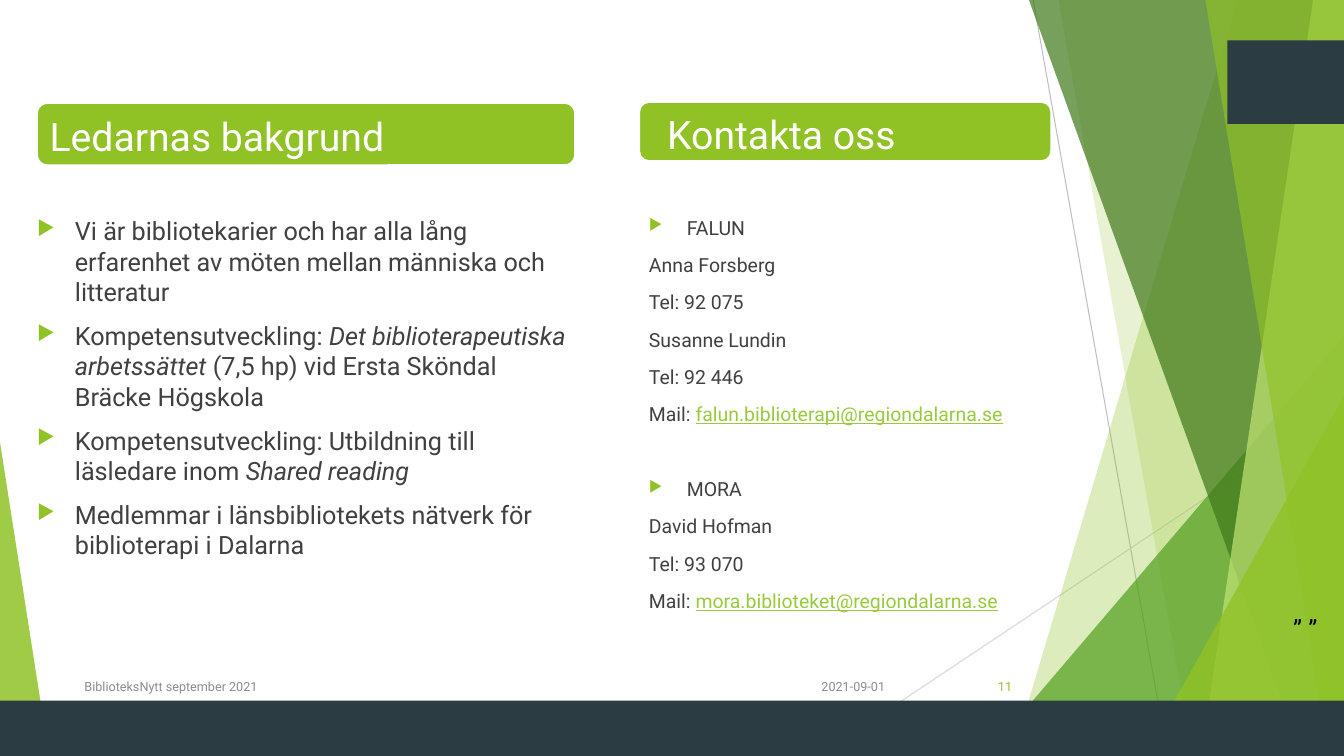
from lxml import etree
from pptx import Presentation
from pptx.dml.color import RGBColor
from pptx.enum.shapes import MSO_CONNECTOR, MSO_SHAPE
from pptx.enum.text import MSO_ANCHOR, PP_ALIGN
from pptx.oxml.ns import qn
from pptx.util import Pt

STRAIGHT = MSO_CONNECTOR.STRAIGHT
RECT = MSO_SHAPE.RECTANGLE
ROUNDED = MSO_SHAPE.ROUNDED_RECTANGLE
TRIANGLE = MSO_SHAPE.ISOSCELES_TRIANGLE
TOP, MIDDLE = MSO_ANCHOR.TOP, MSO_ANCHOR.MIDDLE
LEFT, RIGHT = PP_ALIGN.LEFT, PP_ALIGN.RIGHT

WIDTH, HEIGHT = 960, 540
FONT = "Roboto"
COLORS = {
    "lime": "90C226", "green": "54A021", "forest": "3F7819", "pale": "C0E474",
    "slate": "2C3C43", "white": "FFFFFF", "body": "404040", "footer": "8C8C8C",
    "mail": "99CA3C", "black": "000000", "ray": "BFBFBF", "faint_ray": "D9D9D9",
}

BACKGROUND = [
    [("Vi är bibliotekarier och har alla lång erfarenhet av möten mellan "
      "människa och litteratur", {})],
    [("Kompetensutveckling: ", {}),
     ("Det biblioterapeutiska arbetssättet ", {"italic": True}),
     ("(7,5 hp) vid Ersta Sköndal Bräcke Högskola", {})],
    [("Kompetensutveckling: Utbildning till läsledare inom ", {}),
     ("Shared reading", {"italic": True})],
    [("Medlemmar i länsbibliotekets nätverk för biblioterapi i Dalarna", {})],
]
OFFICES = [
    ("FALUN", ["Anna Forsberg", "Tel: 92 075", "Susanne Lundin", "Tel: 92 446"],
     "falun.biblioterapi@regiondalarna.se"),
    ("MORA", ["David Hofman", "Tel: 93 070"], "mora.biblioteket@regiondalarna.se"),
]


def rgb(name):
    return RGBColor.from_string(COLORS[name])


def paint(shape, color, opacity=100, outline=None):
    shape.shadow.inherit = False
    shape.fill.solid()
    shape.fill.fore_color.rgb = rgb(color)
    if opacity < 100:
        tint = shape.fill._xPr.find(qn("a:solidFill"))[0]
        etree.SubElement(tint, qn("a:alpha"), val=str(opacity * 1000))
    if outline:
        shape.line.color.rgb = rgb(outline)
        shape.line.width = Pt(1.5)
    else:
        shape.line.fill.background()


def add_block(slide, kind, box, color, opacity=100, outline=None, adjust=None):
    block = slide.shapes.add_shape(kind, *map(Pt, box))
    if adjust is not None:
        block.adjustments[0] = adjust
    paint(block, color, opacity, outline)


def add_ray(slide, start, end, color):
    ray = slide.shapes.add_connector(STRAIGHT, *map(Pt, start + end))
    ray.line.color.rgb = rgb(color)
    ray.line.width = Pt(0.75)
    etree.SubElement(ray._element.spPr, qn("a:effectLst"))


def add_ribbon(slide, top_x, bottom_x, color, opacity):
    outline = slide.shapes.build_freeform(Pt(top_x), 0, scale=1.0)
    outline.add_line_segments([(Pt(x), Pt(y)) for x, y in
                               [(WIDTH, 0), (WIDTH, HEIGHT), (bottom_x, HEIGHT)]])
    paint(outline.convert_to_shape(), color, opacity)


def add_arrow_bullet(paragraph):
    props = paragraph._p.get_or_add_pPr()
    props.set("marL", str(Pt(27)))
    props.set("indent", str(-Pt(27)))
    tint = etree.SubElement(props, qn("a:buClr"))
    etree.SubElement(tint, qn("a:srgbClr"), val=COLORS["lime"])
    etree.SubElement(props, qn("a:buSzPct"), val="80000")
    etree.SubElement(props, qn("a:buChar"), char="▶")


def add_text(slide, box, paragraphs, size, color, align=LEFT, anchor=TOP,
             bulleted=(), gaps=None, wrap=True):
    frame = slide.shapes.add_textbox(*map(Pt, box)).text_frame
    frame.word_wrap = wrap
    frame.vertical_anchor = anchor
    if isinstance(paragraphs, str):
        paragraphs = [[(paragraphs, {})]]
    for index, pieces in enumerate(paragraphs):
        paragraph = frame.add_paragraph() if index else frame.paragraphs[0]
        paragraph.alignment = align
        if index:
            paragraph.space_before = Pt((gaps or {}).get(index, 10))
        if index in bulleted:
            add_arrow_bullet(paragraph)
        for words, style in pieces:
            run = paragraph.add_run()
            run.text = words
            run.font.name = FONT
            run.font.size = Pt(size)
            run.font.color.rgb = rgb(style.get("color", color))
            run.font.italic = style.get("italic")
            run.font.underline = style.get("underline")


def draw_backdrop(slide, box):
    left, top, width, height = box
    right, bottom = left + width, top + height
    add_ray(slide, (738, top), (834, bottom), "ray")
    add_ray(slide, (right, 290), (585, bottom), "faint_ray")
    add_ribbon(slide, 884, 723, "lime", 30)
    add_ribbon(slide, 756, 852, "lime", 20)
    add_block(slide, TRIANGLE, (right - 256, bottom - 300, 256, 300), "green", 72, adjust=1)
    add_ribbon(slide, 735, 930, "forest", 70)
    add_ribbon(slide, 938, 858, "pale", 70)
    add_ribbon(slide, 861, 949, "lime", 65)
    add_block(slide, TRIANGLE, (right - 143, bottom - 257, 143, 257), "lime", 80, adjust=1)
    add_block(slide, TRIANGLE, (left, bottom - 224, 35, 224), "lime", 85, adjust=0)
    add_block(slide, RECT, (left, bottom - 39.6, width, 39.6), "slate")
    add_block(slide, RECT, (right - 83.3, top + 28.8, 83.3, 59.8), "slate")


def draw_heading(slide, box, title, inset):
    left, top, width, height = box
    add_block(slide, ROUNDED, box, "lime", outline="white")
    add_text(slide, (left + inset, top + 1.5, width - inset, height), title,
             28, "white", anchor=MIDDLE)


def draw_background(slide, box):
    left, top, width, height = box
    draw_heading(slide, (left + 7, top, width - 13, 44.6), "Ledarnas bakgrund", 2)
    add_text(slide, (left, top + 77, width, height - 77), BACKGROUND, 18, "body",
             bulleted=range(len(BACKGROUND)))


def draw_contacts(slide, box):
    left, top, width, height = box
    draw_heading(slide, (left, top, width - 21.5, 42.5), "Kontakta oss", 13)
    lines, starts = [], []
    for town, details, mail in OFFICES:
        starts.append(len(lines))
        lines += [[(line, {})] for line in [town] + details]
        lines.append([("Mail: ", {}), (mail, {"color": "mail", "underline": True})])
    add_text(slide, (left, top + 77.8, width, height - 77.8), lines, 13.9, "body",
             bulleted=starts, gaps={start: 36.6 for start in starts})


def draw_footer(slide, box):
    left, top, width, height = box
    add_text(slide, (left + 514, top, 72, height), "2021-09-01", 9, "footer",
             align=RIGHT, anchor=MIDDLE)
    add_text(slide, (left, top, 496, height), "BiblioteksNytt september 2021", 9,
             "footer", anchor=MIDDLE)
    add_text(slide, (left + width - 54, top, 54, height), "11", 9, "lime",
             align=RIGHT, anchor=MIDDLE)


def main():
    deck = Presentation()
    deck.slide_width, deck.slide_height = Pt(WIDTH), Pt(HEIGHT)
    slide = deck.slides.add_slide(deck.slide_layouts[6])
    draw_backdrop(slide, (0, 0, WIDTH, HEIGHT))
    draw_footer(slide, (53.3, 476, 676.7, 28.8))
    draw_background(slide, (19.4, 73.5, 397.4, 338.4))
    add_text(slide, (916.6, 434.9, 43, 28.8), "” ”", 18, "black", wrap=False)
    draw_contacts(slide, (456.5, 72.7, 316, 369))
    deck.save("out.pptx")


if __name__ == "__main__":
    main()
